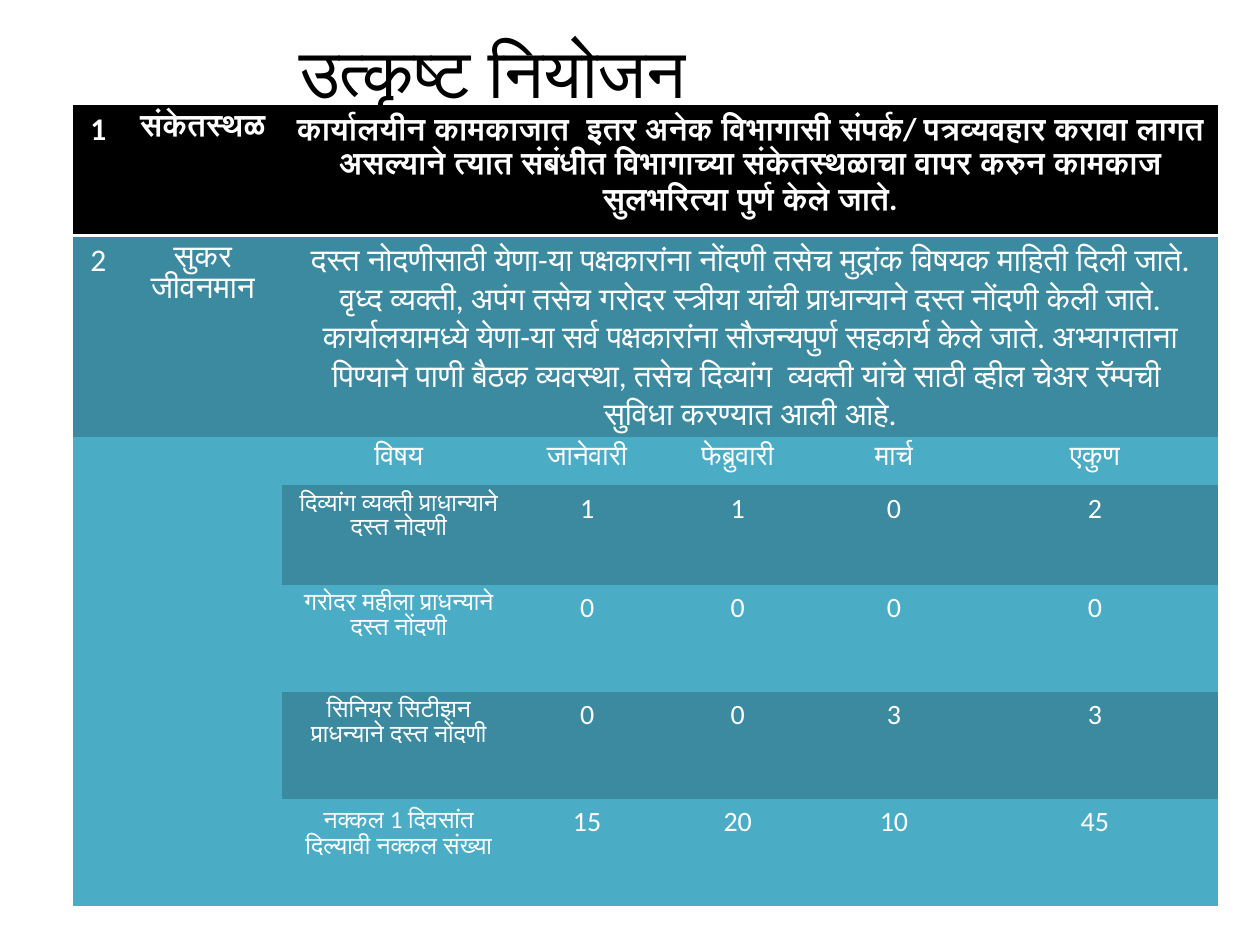
from pptx import Presentation
from pptx.dml.color import RGBColor
from pptx.enum.text import MSO_ANCHOR, PP_ALIGN
from pptx.oxml import parse_xml
from pptx.oxml.ns import nsdecls
from pptx.util import Inches, Pt

BLACK = RGBColor(0x00, 0x00, 0x00)
WHITE = RGBColor(0xFF, 0xFF, 0xFF)
TEAL_DARK = RGBColor(0x3C, 0x8A, 0x9F)
TEAL = RGBColor(0x4B, 0xAC, 0xC6)
PLAIN_STYLE = "{2D5ABB26-0587-4C30-8999-92F81FD0307C}"

COLS = [0.4, 1.26, 1.85, 1.14, 1.25, 1.23, 1.96]
ROWS = [1.04, 1.51, 0.38, 0.79, 0.85, 0.85, 0.85]
ROW_FILLS = [BLACK] + [TEAL_DARK, TEAL] * 3
MERGES = [((0, 2), (0, 6)), ((1, 2), (1, 6)),
          ((2, 0), (3, 0)), ((2, 1), (3, 1)),
          ((4, 0), (6, 0)), ((4, 1), (6, 1))]

TOPICS = [
    ("1", "संकेतस्थळ",
     "कार्यालयीन कामकाजात  इतर अनेक विभागासी संपर्क/ पत्रव्यवहार करावा लागत "
     "असल्याने त्यात संबंधीत विभागाच्या संकेतस्थळाचा वापर करुन कामकाज "
     "सुलभरित्या पुर्ण केले जाते."),
    ("2", "सुकर जीवनमान",
     "दस्त नोदणीसाठी येणा-या पक्षकारांना नोंदणी तसेच मुद्रांक विषयक माहिती दिली जाते. "
     "वृध्द व्यक्ती, अपंग तसेच गरोदर स्त्रीया यांची प्राधान्याने दस्त नोंदणी केली जाते. "
     "कार्यालयामध्ये येणा-या सर्व पक्षकारांना सौजन्यपुर्ण सहकार्य केले जाते. अभ्यागताना "
     "पिण्याने पाणी बैठक व्यवस्था, तसेच दिव्यांग  व्यक्ती यांचे साठी व्हील चेअर रॅम्पची  "
     "सुविधा करण्यात आली आहे."),
]
COUNTS = [
    ("विषय", "जानेवारी", "फेब्रुवारी", "मार्च", "एकुण"),
    ("दिव्यांग व्यक्ती प्राधान्याने दस्त नोदणी", "1", "1", "0", "2"),
    ("गरोदर महीला प्राधन्याने दस्त नोंदणी", "0", "0", "0", "0"),
    ("सिनियर सिटीझन प्राधन्याने दस्त नोंदणी", "0", "0", "3", "3"),
    ("नक्कल 1 दिवसांत दिल्यावी नक्कल संख्या", "15", "20", "10", "45"),
]


class SlideBuilder:
    font_name = "Calibri"

    def __init__(self, s):
        self.s = s

    def text(self, tf, content, color, size, bold=False):
        p = tf.paragraphs[0]
        p.alignment = PP_ALIGN.CENTER
        r = p.add_run()
        r.text = content
        fmt = {"name": self.font_name, "size": Pt(size), "bold": bold}
        for key, value in fmt.items():
            setattr(r.font, key, value)
        r.font.color.rgb = color

    def title(self, content, x, y, w, h, margin_right):
        tf = self.s.shapes.add_textbox(Inches(x), Inches(y), Inches(w), Inches(h)).text_frame
        fmt = {"word_wrap": True, "vertical_anchor": MSO_ANCHOR.MIDDLE,
               "margin_right": Inches(margin_right)}
        for key, value in fmt.items():
            setattr(tf, key, value)
        self.text(tf, content, BLACK, 39.6)

    def table(self, x, y, cols, rows, fills, merges):
        table = self.s.shapes.add_table(len(rows), len(cols), Inches(x), Inches(y),
                                        Inches(sum(cols)), Inches(sum(rows))).table
        table._tbl.tblPr[0].text = PLAIN_STYLE
        table.first_row = table.horz_banding = False
        for col, width in zip(table.columns, cols):
            col.width = Inches(width)
        for row, height, color in zip(table.rows, rows, fills):
            row.height = Inches(height)
            for cell in row.cells:
                cell.fill.solid()
                cell.fill.fore_color.rgb = color
        for first, last in merges:
            table.cell(*first).merge(table.cell(*last))
        return table

    def bottom_border(self, row, color, width):
        for cell in row.cells:
            cell._tc.get_or_add_tcPr().insert(0, parse_xml(
                f'<a:lnB {nsdecls("a")} w="{Pt(width)}"><a:solidFill>'
                f'<a:srgbClr val="{color}"/></a:solidFill></a:lnB>'))


def main():
    prs = Presentation()
    prs.slide_width, prs.slide_height = Inches(10), Inches(7.5)
    b = SlideBuilder(prs.slides.add_slide(prs.slide_layouts[6]))

    # Title, centred left of the middle by a wide right margin
    b.title("उत्कृष्ट नियोजन", 0, 0.3, 9.75, 0.53, margin_right=2.03)

    # Table frame
    table = b.table(0.58, 0.83, COLS, ROWS, ROW_FILLS, MERGES)
    b.bottom_border(table.rows[0], WHITE, 2)

    # Numbered topics
    for i, topic in enumerate(TOPICS):
        for j, content in enumerate(topic):
            b.text(table.cell(i, j).text_frame, content, WHITE, 18, bold=i == 0)

    # Monthly counts, with smaller row labels
    for i, counts in enumerate(COUNTS):
        for j, content in enumerate(counts):
            size = 14 if i > 0 and j == 0 else 16
            b.text(table.cell(i + len(TOPICS), j + 2).text_frame, content, WHITE, size)

    prs.save("out.pptx")


if __name__ == "__main__":
    main()
